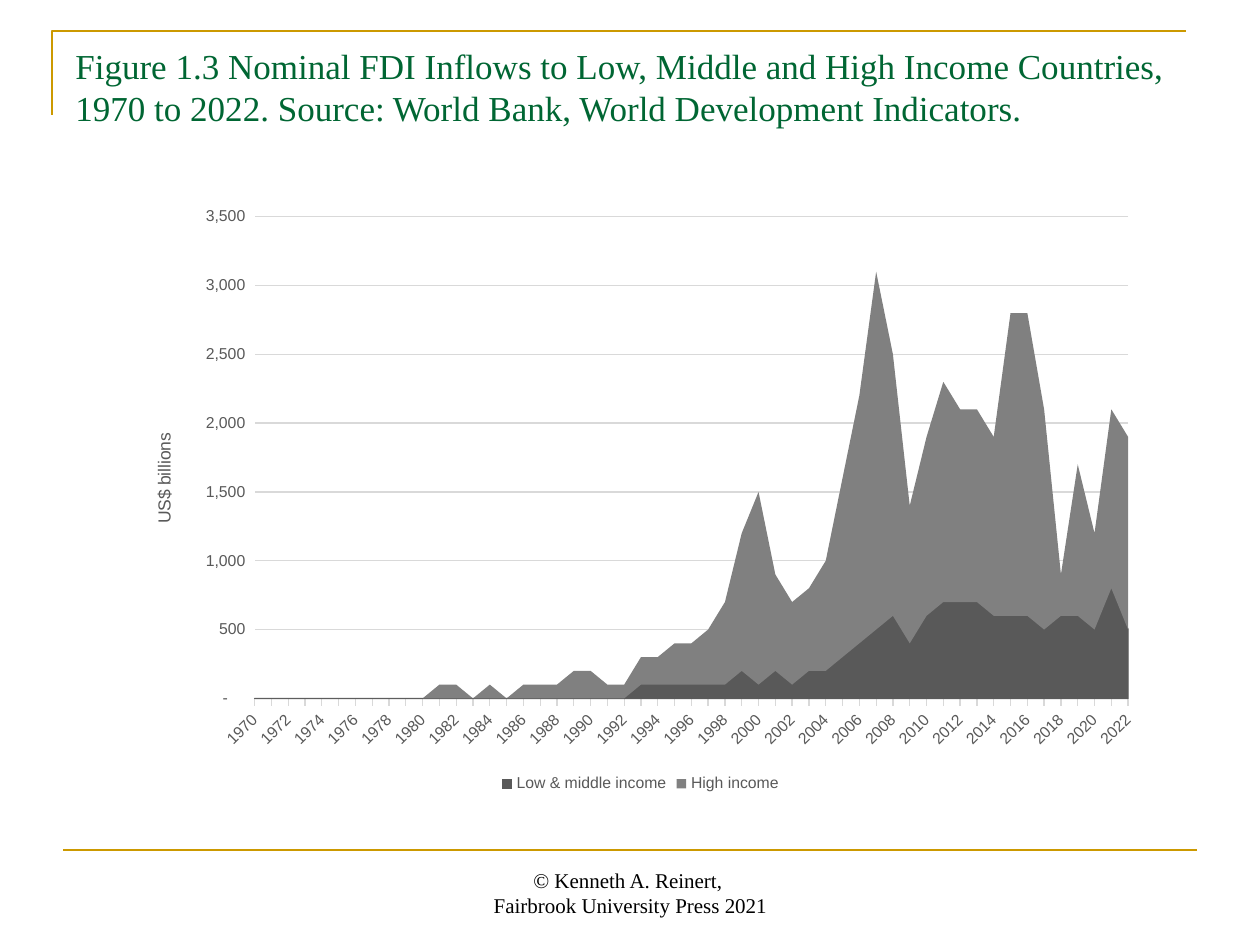
"""Build a slide with a stacked area chart of FDI inflows."""
from dataclasses import dataclass

from lxml.etree import SubElement
from pptx import Presentation
from pptx.chart.data import CategoryChartData
from pptx.dml.color import RGBColor
from pptx.enum.chart import XL_CHART_TYPE, XL_LEGEND_POSITION, XL_TICK_MARK
from pptx.enum.shapes import MSO_CONNECTOR
from pptx.enum.text import MSO_ANCHOR, PP_ALIGN
from pptx.oxml import parse_xml
from pptx.oxml.ns import nsdecls, qn
from pptx.util import Pt

SCALE = 914400 / 126


@dataclass(frozen=True)
class Theme:
    gold: str = "CC9900"
    green: str = "006633"
    black: str = "000000"
    dark: str = "595959"
    mid: str = "808080"
    pale: str = "D9D9D9"
    serif: str = "Times New Roman"
    sans: str = "Arial"
    head: int = 20
    foot: int = 12
    name: int = 10
    label: int = 9
    rule: float = 1.5
    thin: float = 0.75


@dataclass(frozen=True)
class Box:
    left: int
    top: int
    width: int
    height: int

    def emu(self) -> list[int]:
        return [px(n) for n in (self.left, self.top, self.width, self.height)]


@dataclass(frozen=True)
class Label:
    box: Box
    lines: tuple[str, ...]
    size: int
    color: str
    align: PP_ALIGN
    anchor: MSO_ANCHOR


@dataclass(frozen=True)
class Series:
    name: str
    values: tuple[int, ...]
    color: str


THEME = Theme()
PLOT = Box(255, 217, 874, 482)
CHART = Box(126, 195, 1029, 603)
LABELS = (
    Label(Box(63, 38, 1134, 157),
          ("Figure 1.3 Nominal FDI Inflows to Low, Middle and High Income Countries, "
           "1970 to 2022. Source: World Bank, World Development Indicators.",),
          THEME.head, THEME.green, PP_ALIGN.LEFT, MSO_ANCHOR.TOP),
    Label(Box(431, 861, 399, 63),
          ("© Kenneth A. Reinert, ", "Fairbrook University Press 2021"),
          THEME.foot, THEME.black, PP_ALIGN.CENTER, MSO_ANCHOR.BOTTOM),
)
SERIES = (
    Series("Low & middle income", (
        0, 0, 0, 0, 0, 0, 0, 0, 0, 0,
        0, 0, 0, 0, 0, 0, 0, 0, 0, 0,
        0, 0, 0, 100, 100, 100, 100, 100, 100, 200,
        100, 200, 100, 200, 200, 300, 400, 500, 600, 400,
        600, 700, 700, 700, 600, 600, 600, 500, 600, 600,
        500, 800, 500), THEME.dark),
    Series("High income", (
        0, 0, 0, 0, 0, 0, 0, 0, 0, 0,
        0, 100, 100, 0, 100, 0, 100, 100, 100, 200,
        200, 100, 100, 200, 200, 300, 300, 400, 600, 1000,
        1400, 700, 600, 600, 800, 1300, 1800, 2600, 1900, 1000,
        1300, 1600, 1400, 1400, 1300, 2200, 2200, 1600, 300, 1100,
        700, 1300, 1400), THEME.mid),
)


def px(count: int) -> int:
    return round(count * SCALE)


def ink(line, color: str, width: float) -> None:
    line.color.rgb = RGBColor.from_string(color)
    line.width = Pt(width)


def style(font, face: str, size: int, color: str) -> None:
    font.name, font.size, font.bold = face, Pt(size), False
    font.color.rgb = RGBColor.from_string(color)


def write(slide, label: Label) -> None:
    frame = slide.shapes.add_textbox(*label.box.emu()).text_frame
    frame.word_wrap = True
    frame.vertical_anchor = label.anchor
    frame.text = "\n".join(label.lines)
    for para in frame.paragraphs:
        para.alignment = label.align
        style(para.font, THEME.serif, label.size, label.color)


def frame_rules(slide) -> None:
    build = slide.shapes.build_freeform(52, 115, scale=SCALE)
    build.add_line_segments([(52, 31), (1186, 31)], close=False)
    edge = build.convert_to_shape()
    edge.shadow.inherit = False
    edge.fill.background()
    ink(edge.line, THEME.gold, THEME.rule)
    base = slide.shapes.add_connector(
        MSO_CONNECTOR.STRAIGHT, px(63), px(850), px(1197), px(850))
    ink(base.line, THEME.gold, THEME.rule)
    SubElement(base._element.spPr, qn("a:effectLst"))


def layout(box: Box, sized: bool):
    parts = {"xMode": "edge", "yMode": "edge",
             "x": round((box.left - CHART.left) / CHART.width, 3),
             "y": round((box.top - CHART.top) / CHART.height, 3)}
    if sized:
        parts = {"layoutTarget": "inner"} | parts | {
            "w": round(box.width / CHART.width, 3),
            "h": round(box.height / CHART.height, 3)}
    body = "".join(f'<c:{tag} val="{val}"/>' for tag, val in parts.items())
    return parse_xml(f'<c:layout {nsdecls("c")}><c:manualLayout>{body}'
                     '</c:manualLayout></c:layout>')


def place(node, box: Box, after: int, sized: bool) -> None:
    for old in node.findall(qn("c:layout")):
        node.remove(old)
    node.insert(after, layout(box, sized))


def set_years(axis) -> None:
    style(axis.tick_labels.font, THEME.sans, THEME.label, THEME.dark)
    axis.major_tick_mark = XL_TICK_MARK.OUTSIDE
    axis.has_major_gridlines = False
    ink(axis.format.line, THEME.pale, THEME.thin)
    node = axis._element
    node.find(qn("c:txPr")).find(qn("a:bodyPr")).set("rot", "-2700000")
    last = node.find(qn("c:noMultiLvlLbl"))
    for tag, step in (("tickLblSkip", 2), ("tickMarkSkip", 1)):
        last.addprevious(parse_xml(f'<c:{tag} {nsdecls("c")} val="{step}"/>'))


def set_sums(axis) -> None:
    style(axis.tick_labels.font, THEME.sans, THEME.label, THEME.dark)
    axis.tick_labels.number_format = '_(* #,##0_);_(* \\(#,##0\\);_(* "-"??_);_(@_)'
    axis.tick_labels.number_format_is_linked = False
    axis.minimum_scale, axis.maximum_scale, axis.major_unit = 0, 3500, 500
    axis.major_tick_mark = XL_TICK_MARK.NONE
    axis.format.line.fill.background()
    ink(axis.major_gridlines.format.line, THEME.pale, THEME.thin)
    frame = axis.axis_title.text_frame
    frame.text = "US$ billions"
    style(frame.paragraphs[0].font, THEME.sans, THEME.name, THEME.dark)
    frame._txBody.find(qn("a:bodyPr")).set("rot", "-5400000")
    place(axis.axis_title._element, Box(150, 430, 18, 90), 1, False)
    axis._element.find(qn("c:crossBetween")).set("val", "midCat")


def draw_chart(slide) -> None:
    data = CategoryChartData(number_format="#,##0")
    data.categories = [str(year) for year in range(1970, 2023)]
    for item in SERIES:
        data.add_series(item.name, item.values)
    chart = slide.shapes.add_chart(
        XL_CHART_TYPE.AREA_STACKED, *CHART.emu(), data).chart
    style(chart.font, THEME.sans, THEME.name, THEME.black)
    chart.has_title = False
    chart.has_legend = True
    chart.legend.position = XL_LEGEND_POSITION.BOTTOM
    chart.legend.include_in_layout = False
    style(chart.legend.font, THEME.sans, THEME.label, THEME.dark)
    chart.plots[0].vary_by_categories = False
    for item, area in zip(SERIES, chart.plots[0].series):
        area.format.fill.solid()
        area.format.fill.fore_color.rgb = RGBColor.from_string(item.color)
        area.format.line.fill.background()
    ink(chart.plots[0].series[0].format.line, THEME.dark, THEME.thin)
    set_years(chart.category_axis)
    set_sums(chart.value_axis)
    place(chart._chartSpace.chart.plotArea, PLOT, 0, True)


def main() -> None:
    deck = Presentation()
    deck.slide_width, deck.slide_height = px(1260), px(945)
    slide = deck.slides.add_slide(deck.slide_layouts[6])
    frame_rules(slide)
    for label in LABELS:
        write(slide, label)
    draw_chart(slide)
    deck.save("out.pptx")


if __name__ == "__main__":
    main()
